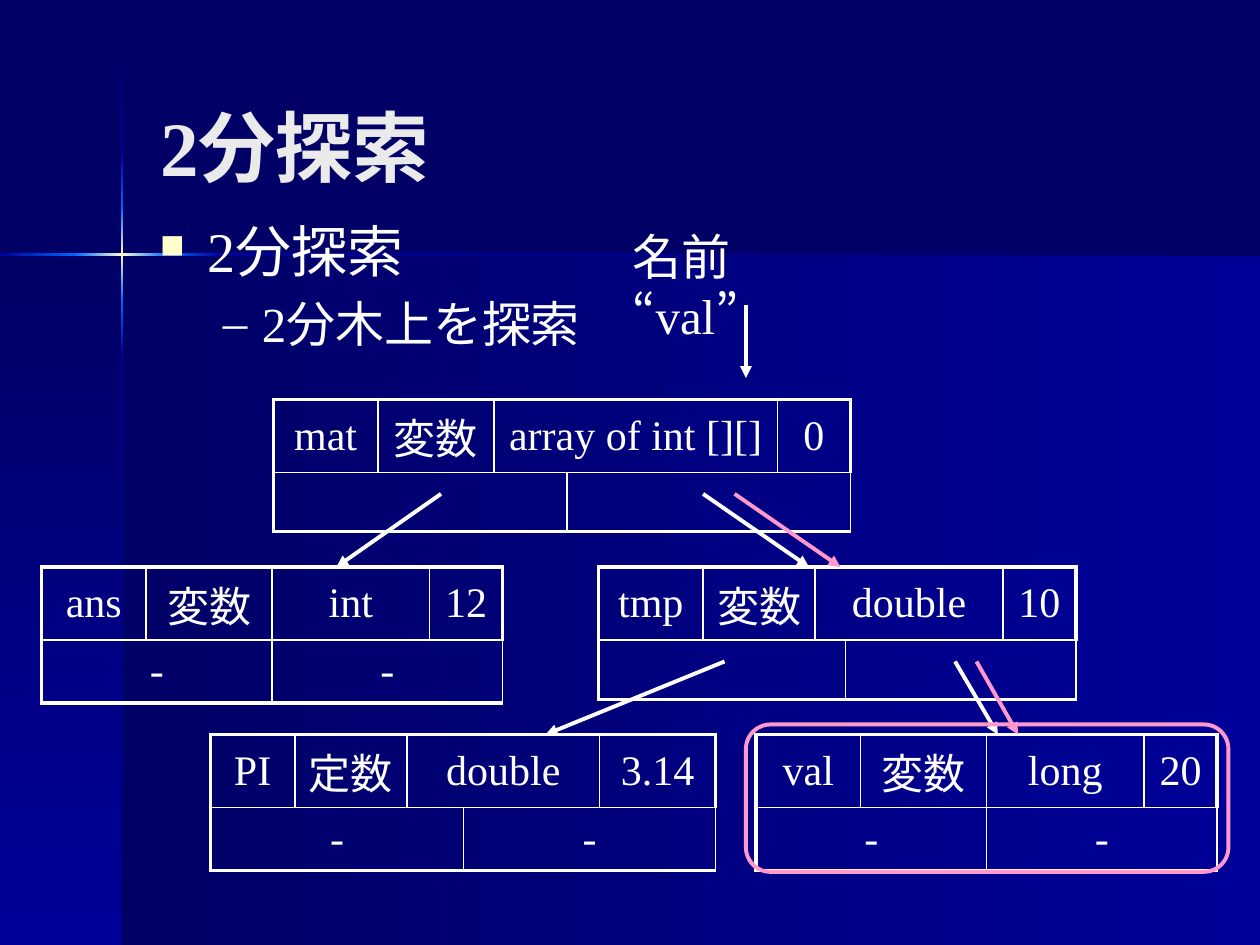
from dataclasses import dataclass

from lxml.etree import SubElement
from pptx import Presentation
from pptx.dml.color import RGBColor
from pptx.enum.lang import MSO_LANGUAGE_ID as Language
from pptx.enum.shapes import MSO_CONNECTOR as Connector, MSO_SHAPE as Shape
from pptx.enum.text import MSO_ANCHOR as Anchor, MSO_AUTO_SIZE as AutoSize, PP_ALIGN as Align
from pptx.oxml import parse_xml
from pptx.oxml.ns import nsdecls, qn
from pptx.util import Inches, Pt


@dataclass(frozen=True)
class Theme:
    font: str = "Times New Roman"
    night: str = "000066"
    blue: str = "000099"
    glow: str = "0066FF"
    cream: str = "FFFFCC"
    white: str = "FFFFFF"
    silver: str = "EAEAEA"
    pink: str = "FF99CC"
    title: int = 44
    topic: int = 32
    detail: int = 28
    cell: int = 24
    thick: float = 2.25
    thin: float = 1


THEME = Theme()
ROW_HEIGHTS = (0.58, 0.47)

BACKDROP = [
    ((0.97, 2.02, 9.03, 5.48), 0, (THEME.night, THEME.blue)),
    ((0, 2.02, 0.97, 5.48), 90, (THEME.night, THEME.blue)),
    ((0.96, 1.65, 0.02, 0.73), 90, (THEME.glow, THEME.cream, THEME.glow)),
    ((1.33, 2.01, 0.44, 0.02), 0, (THEME.glow, THEME.blue)),
    ((0, 2.01, 0.61, 0.02), 0, (THEME.blue, THEME.glow)),
    ((0.96, 0.01, 0.02, 1.21), 90, (THEME.night, THEME.blue)),
    ((0.96, 2.82, 0.02, 4.68), 90, (THEME.blue, THEME.night)),
    ((1.77, 2.01, 8.23, 0.02), 0, (THEME.blue, THEME.night)),
    ((0.96, 2.38, 0.02, 0.44), 90, (THEME.glow, THEME.blue)),
    ((0.96, 1.21, 0.02, 0.44), 90, (THEME.blue, THEME.glow)),
    ((0.6, 2.01, 0.73, 0.02), 0, (THEME.glow, THEME.cream, THEME.glow)),
]

NODES = [
    (0.33, 4.5, (0.83, 1, 1.25, 0.58), ("ans", "変数", "int", "12"), "-"),
    (4.75, 4.5, (0.83, 0.89, 0.2, 1.25, 0.58), ("tmp", "変数", "double", "10"), ""),
    (2.17, 3.17, (0.83, 0.92, 0.58, 1.67, 0.58), ("mat", "変数", "array of int [][]", "0"), ""),
    (1.67, 5.83, (0.67, 0.89, 0.45, 1.08, 0.92), ("PI", "定数", "double", "3.14"), "-"),
    (6, 5.83, (0.83, 1, 1.25, 0.58), ("val", "変数", "long", "20"), "-"),
]

ARROWS = [
    ((3.5, 3.92), (2.67, 4.5), THEME.white),
    ((5.58, 3.92), (6.42, 4.5), THEME.white),
    ((5.75, 5.25), (4.33, 5.83), THEME.white),
    ((7.58, 5.25), (7.92, 5.83), THEME.white),
    ((5.92, 2.42), (5.92, 3), THEME.white),
    ((5.83, 3.92), (6.67, 4.5), THEME.pink),
    ((7.75, 5.25), (8.08, 5.83), THEME.pink),
]


def color(value):
    return RGBColor.from_string(value)


def format_text(para, size, value=THEME.white, bold=False):
    for span in para.runs:
        span.font.name = THEME.font
        span.font.size = Pt(size)
        span.font.bold = bold
        span.font.color.rgb = color(value)
        span.font.language_id = Language.JAPANESE


def add_gradient(page, bounds, angle, values):
    bar = page.shapes.add_shape(Shape.RECTANGLE, *map(Inches, bounds))
    bar.shadow.inherit = False
    bar.line.fill.background()
    step = 100000 // (len(values) - 1)
    stops = "".join(
        f'<a:gs pos="{index * step}"><a:srgbClr val="{value}"/></a:gs>'
        for index, value in enumerate(values)
    )
    gradient = parse_xml(
        f'<a:gradFill {nsdecls("a")}><a:gsLst>{stops}</a:gsLst>'
        f'<a:lin ang="{angle * 60000}" scaled="0"/></a:gradFill>'
    )
    bar._element.spPr.find(qn("a:prstGeom")).addnext(gradient)


def set_title(page, text):
    title = page.shapes.title
    title.left, title.top, title.width, title.height = map(Inches, (1.17, 0, 7.75, 1.57))
    frame = title.text_frame
    frame.text = text
    frame.auto_size = AutoSize.NONE
    frame.vertical_anchor = Anchor.BOTTOM
    frame.paragraphs[0].alignment = Align.LEFT
    format_text(frame.paragraphs[0], THEME.title, THEME.silver, True)


def add_text(page, bounds, text, sizes):
    box = page.shapes.add_textbox(*map(Inches, bounds))
    frame = box.text_frame
    frame.word_wrap = True
    frame.text = text
    for para, size in zip(frame.paragraphs, sizes):
        format_text(para, size)
    return frame.paragraphs


def set_bullet(para, mark, font, value, percent, margin, hang):
    para.space_before = Pt(para.runs[0].font.size.pt * 0.2)
    settings = para._p.get_or_add_pPr()
    settings.set("marL", str(Inches(margin)))
    settings.set("indent", str(-Inches(hang)))
    tint = SubElement(settings, qn("a:buClr"))
    SubElement(tint, qn("a:srgbClr"), val=value)
    SubElement(settings, qn("a:buSzPct"), val=str(percent * 1000))
    SubElement(settings, qn("a:buFont"), typeface=font)
    SubElement(settings, qn("a:buChar"), char=mark)


def set_borders(cell, outer_edges):
    settings = cell._tc.get_or_add_tcPr()
    for index, (edge, outer) in enumerate(zip("LRTB", outer_edges)):
        width = Pt(THEME.thick if outer else THEME.thin)
        settings.insert(index, parse_xml(
            f'<a:ln{edge} {nsdecls("a")} w="{width}"><a:solidFill>'
            f'<a:srgbClr val="{THEME.white}"/></a:solidFill></a:ln{edge}>'
        ))


def set_cell(cell, text):
    cell.text = text
    cell.vertical_anchor = Anchor.MIDDLE
    para = cell.text_frame.paragraphs[0]
    para.alignment = Align.CENTER
    para.space_before = Pt(THEME.cell * 0.2)
    format_text(para, THEME.cell)


def add_node(page, left, top, widths, fields, pointer):
    last = len(widths) - 1
    bounds = (left, top, sum(widths), sum(ROW_HEIGHTS))
    table = page.shapes.add_table(2, len(widths), *map(Inches, bounds)).table
    table.first_row = table.horz_banding = False
    for column, width in zip(table.columns, widths):
        column.width = Inches(width)
    for row, height in zip(table.rows, ROW_HEIGHTS):
        row.height = Inches(height)
    for r in range(2):
        for c in range(len(widths)):
            cell = table.cell(r, c)
            cell.fill.background()
            set_borders(cell, (c == 0, c == last, r == 0, r == 1))
    for r, start, end in ((0, 2, last - 1), (1, 0, last - 2), (1, last - 1, last)):
        if end > start:
            table.cell(r, start).merge(table.cell(r, end))
    for c, text in zip((0, 1, 2, last), fields):
        set_cell(table.cell(0, c), text)
    for c in (0, last - 1):
        set_cell(table.cell(1, c), pointer)


def add_arrow(page, start, end, value):
    arrow = page.shapes.add_connector(Connector.STRAIGHT, *map(Inches, start + end))
    arrow.line.color.rgb = color(value)
    arrow.line.width = Pt(THEME.thick)
    SubElement(arrow.line._get_or_add_ln(), qn("a:tailEnd"), type="triangle")
    SubElement(arrow._element.spPr, qn("a:effectLst"))


def add_highlight(page, bounds):
    frame = page.shapes.add_shape(Shape.ROUNDED_RECTANGLE, *map(Inches, bounds))
    frame.shadow.inherit = False
    frame.fill.background()
    frame.line.color.rgb = color(THEME.pink)
    frame.line.width = Pt(THEME.thick)


def main():
    deck = Presentation()
    deck.slide_width, deck.slide_height = Inches(10), Inches(7.5)
    page = deck.slides.add_slide(deck.slide_layouts[5])
    page.background.fill.solid()
    page.background.fill.fore_color.rgb = color(THEME.night)
    for bar in BACKDROP:
        add_gradient(page, *bar)
    set_title(page, "2分探索")
    topic, detail = add_text(page, (1.17, 1.67, 8.25, 1.33), "2分探索\n2分木上を探索",
                             (THEME.topic, THEME.detail))
    set_bullet(topic, "n", "Wingdings", THEME.cream, 60, 0.38, 0.38)
    set_bullet(detail, "–", THEME.font, THEME.white, 100, 0.81, 0.31)
    for node in NODES:
        add_node(page, *node)
    add_text(page, (4.92, 1.75, 1.89, 0.57), "名前 “val”", (THEME.detail,))
    for arrow in ARROWS:
        add_arrow(page, *arrow)
    add_highlight(page, (5.92, 5.75, 3.83, 1.17))
    deck.save("out.pptx")


if __name__ == "__main__":
    main()
